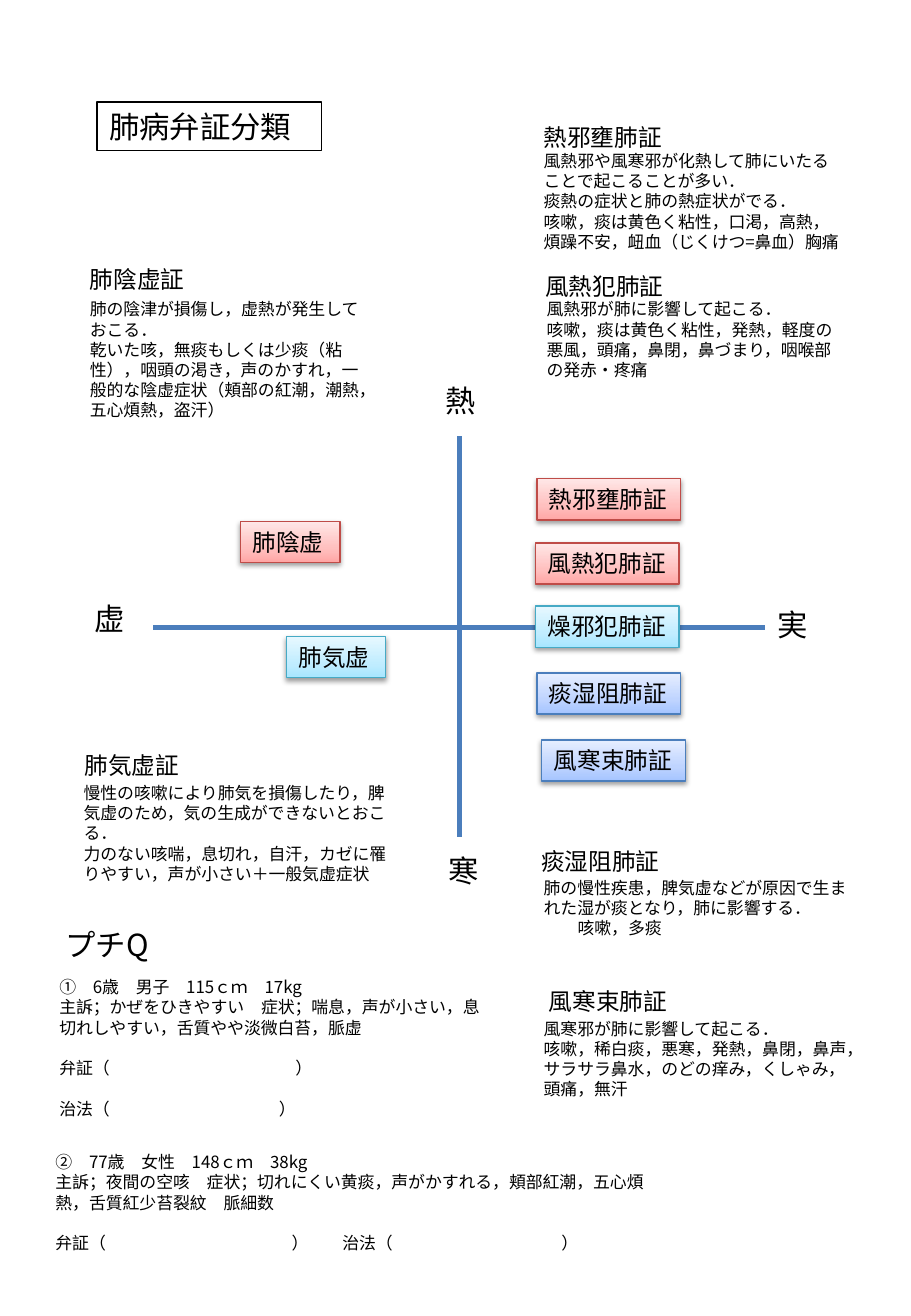
from copy import deepcopy

from lxml import etree
from pptx import Presentation
from pptx import util as u
from pptx.dml.color import RGBColor
from pptx.enum import shapes, text
from pptx.oxml.ns import qn

FONT = "Noto Sans CJK JP"
BLACK, AXIS = "000000", "4B7EBC"
BODY, HEAD, BIG = 10, 14, 18  # text sizes in points
BIG_H, HEAD_H = 1.02, 0.86

# All places are in cm: left, top, width, (height)
TITLE = ("肺病弁証分類", 2.03, 2.13, 4.7, BIG_H)

AXES = [(3.2, 13.11, 16.0, 13.11), (9.6, 9.12, 9.6, 17.5)]

BIG_LABELS = [
    ("実", 16.0, 12.55, 1.6),
    ("虚", 1.73, 12.42, 1.14),
    ("熱", 9.07, 7.85, 1.37),
    ("寒", 9.14, 17.68, 1.73),
    ("プチQ", 1.12, 19.23, 3.18),
]

# line colour, gradient from bottom to top
STYLES = {
    "heat": ("BF4C48", ["FFA6A5", "FFC0BF", "FFE7E7"]),
    "mild": ("46AAC5", ["A7E6FF", "C1EDFF", "E7F8FF"]),
    "cold": ("4B7EBC", ["A4C4FF", "BFD4FF", "E6EEFF"]),
}
STOPS = [0, 0.35, 1]

CHIPS = [
    ("肺気虚", "mild", 5.99, 13.31, 2.08),
    ("肺陰虚", "heat", 5.03, 10.9, 2.08),
    ("熱邪壅肺証", "heat", 11.23, 10.01, 3.0),
    ("風熱犯肺証", "heat", 11.2, 11.35, 3.0),
    ("燥邪犯肺証", "mild", 11.2, 12.67, 3.0),
    ("痰湿阻肺証", "cold", 11.23, 14.07, 3.0),
    ("風寒束肺証", "cold", 11.33, 15.47, 3.0),
]

HEADINGS = [
    ("肺陰虚証", 1.63, 5.41, 3.05),
    ("肺気虚証", 1.52, 15.57, 3.05),
    ("熱邪壅肺証", 11.12, 2.44, 3.0),
    ("風熱犯肺証", 11.15, 5.56, 3.0),
    ("痰湿阻肺証", 11.07, 17.58, 3.0),
    ("風寒束肺証", 11.23, 20.5, 3.0),
]

NOTES = [
    (11.12, 3.02, 6.76, 2.39, [
        "風熱邪や風寒邪が化熱して肺にいたることで起こることが多い．",
        "痰熱の症状と肺の熱症状がでる．",
        "咳嗽，痰は黄色く粘性，口渇，高熱，煩躁不安，衄血（じくけつ=鼻血）胸痛"]),
    (11.18, 6.12, 6.58, 1.96, [
        "風熱邪が肺に影響して起こる．",
        "咳嗽，痰は黄色く粘性，発熱，軽度の悪風，頭痛，鼻閉，鼻づまり，咽喉部の発赤・疼痛"]),
    (1.63, 6.12, 6.3, 2.82, [
        "肺の陰津が損傷し，虚熱が発生しておこる．",
        "乾いた咳，無痰もしくは少痰（粘性），咽頭の渇き，声のかすれ，"
        "一般的な陰虚症状（頬部の紅潮，潮熱，五心煩熱，盗汗）"]),
    (1.5, 16.23, 7.04, 2.82, [
        "慢性の咳嗽により肺気を損傷したり，脾気虚のため，気の生成ができないとおこる．",
        "力のない咳喘，息切れ，自汗，カゼに罹りやすい，声が小さい＋一般気虚症状"]),
    (11.12, 18.21, 6.86, 1.55, [
        "肺の慢性疾患，脾気虚などが原因で生まれた湿が痰となり，肺に影響する．",
        "咳嗽，多痰"]),
    (11.12, 21.16, 6.86, 1.96, [
        "風寒邪が肺に影響して起こる．",
        "咳嗽，稀白痰，悪寒，発熱，鼻閉，鼻声，サラサラ鼻水，のどの痒み，くしゃみ，頭痛，無汗"]),
    (0.99, 20.29, 9.45, 3.25, [
        "①　6歳　男子　115ｃｍ　17kg",
        "主訴；かぜをひきやすい　症状；喘息，声が小さい，息切れしやすい，舌質やや淡微白苔，脈虚",
        "弁証（\t）",
        "治法（\t）"]),
    (0.91, 23.95, 12.93, 2.39, [
        "②　77歳　女性　148ｃｍ　38kg",
        "主訴；夜間の空咳　症状；切れにくい黄痰，声がかすれる，頬部紅潮，五心煩熱，舌質紅少苔裂紋　脈細数",
        "弁証（\t）\t治法（\t）"]),
]
INDENTED = {"咳嗽，多痰": 0.71}
# Tab stops that leave room for the answers
ANSWER_TABS = {
    "弁証（\t）": [4.94],
    "治法（\t）": [4.59],
    "弁証（\t）\t治法（\t）": [4.94, 6.0, 10.58],
}


def rgb(value):
    return RGBColor.from_string(value)


def write(sp, lines, size):
    tf = sp.text_frame
    tf.word_wrap = True
    tf.auto_size = text.MSO_AUTO_SIZE.NONE
    tf.vertical_anchor = text.MSO_ANCHOR.TOP
    tf.margin_left = tf.margin_right = u.Cm(0.25)
    tf.margin_top = tf.margin_bottom = u.Cm(0.13)
    for i, line in enumerate(lines):
        p = tf.add_paragraph() if i else tf.paragraphs[0]
        p.add_run().text = line
        p.alignment = text.PP_ALIGN.LEFT
        p.line_spacing = u.Pt(size * 1.2)
        p.space_before = u.Pt(size * 1.2 if line in ANSWER_TABS else 0)
        p.font.size = u.Pt(size)
        p.font.color.rgb = rgb(BLACK)
        p.font.name = FONT
        # East Asian font, indent and tab stops
        pPr = p._p.get_or_add_pPr()
        defaults = pPr.find(qn("a:defRPr"))
        etree.SubElement(defaults, qn("a:ea"), typeface=FONT)
        if line in INDENTED:
            pPr.set("marL", str(u.Cm(INDENTED[line])))
        if line in ANSWER_TABS:
            tabs = etree.Element(qn("a:tabLst"))
            for pos in ANSWER_TABS[line]:
                etree.SubElement(tabs, qn("a:tab"), pos=str(u.Cm(pos)), algn="l")
            defaults.addprevious(tabs)


def add_text(s, x, y, w, h, lines, size):
    sp = s.shapes.add_textbox(u.Cm(x), u.Cm(y), u.Cm(w), u.Cm(h))
    write(sp, lines, size)


def add_chip(s, label, style, x, y, w):
    line, colours = STYLES[style]
    sp = s.shapes.add_shape(shapes.MSO_SHAPE.RECTANGLE,
                            u.Cm(x), u.Cm(y), u.Cm(w), u.Cm(HEAD_H))
    sp.fill.gradient()
    sp.fill.gradient_angle = 90
    stops = sp._element.spPr.find(qn("a:gradFill")).find(qn("a:gsLst"))
    stops.append(deepcopy(stops[-1]))
    for stop, pos, colour in zip(sp.fill.gradient_stops, STOPS, colours):
        stop.position = pos
        stop.color.rgb = rgb(colour)
    sp.line.color.rgb = rgb(line)
    sp.line.width = u.Pt(0.75)
    # Soft shadow below
    sp.shadow.inherit = False
    effects = sp._element.spPr.find(qn("a:effectLst"))
    shadow = etree.SubElement(effects, qn("a:outerShdw"), blurRad=str(u.Pt(3.1)),
                              dist=str(u.Pt(1.6)), dir="5400000", rotWithShape="0")
    colour = etree.SubElement(shadow, qn("a:srgbClr"), val=BLACK)
    etree.SubElement(colour, qn("a:alpha"), val="38000")
    write(sp, [label], HEAD)


def main():
    prs = Presentation()
    prs.slide_width, prs.slide_height = u.Cm(19.05), u.Cm(27.51)
    s = prs.slides.add_slide(prs.slide_layouts[5])

    # Title
    label, *box = TITLE
    title = s.shapes.title
    title.left, title.top, title.width, title.height = map(u.Cm, box)
    title.line.color.rgb = rgb(BLACK)
    title.line.width = u.Pt(0.75)
    write(title, [label], BIG)

    # Axes
    for ends in AXES:
        axis = s.shapes.add_connector(shapes.MSO_CONNECTOR.STRAIGHT, *map(u.Cm, ends))
        axis.line.color.rgb = rgb(AXIS)
        axis.line.width = u.Pt(3)
        etree.SubElement(axis._element.spPr, qn("a:effectLst"))

    # Patterns on the chart
    for chip in CHIPS:
        add_chip(s, *chip)

    # Labels, headings and notes
    for label, x, y, w in BIG_LABELS:
        add_text(s, x, y, w, BIG_H, [label], BIG)
    for label, x, y, w in HEADINGS:
        add_text(s, x, y, w, HEAD_H, [label], HEAD)
    for x, y, w, h, lines in NOTES:
        add_text(s, x, y, w, h, lines, BODY)

    prs.save("out.pptx")


if __name__ == "__main__":
    main()
